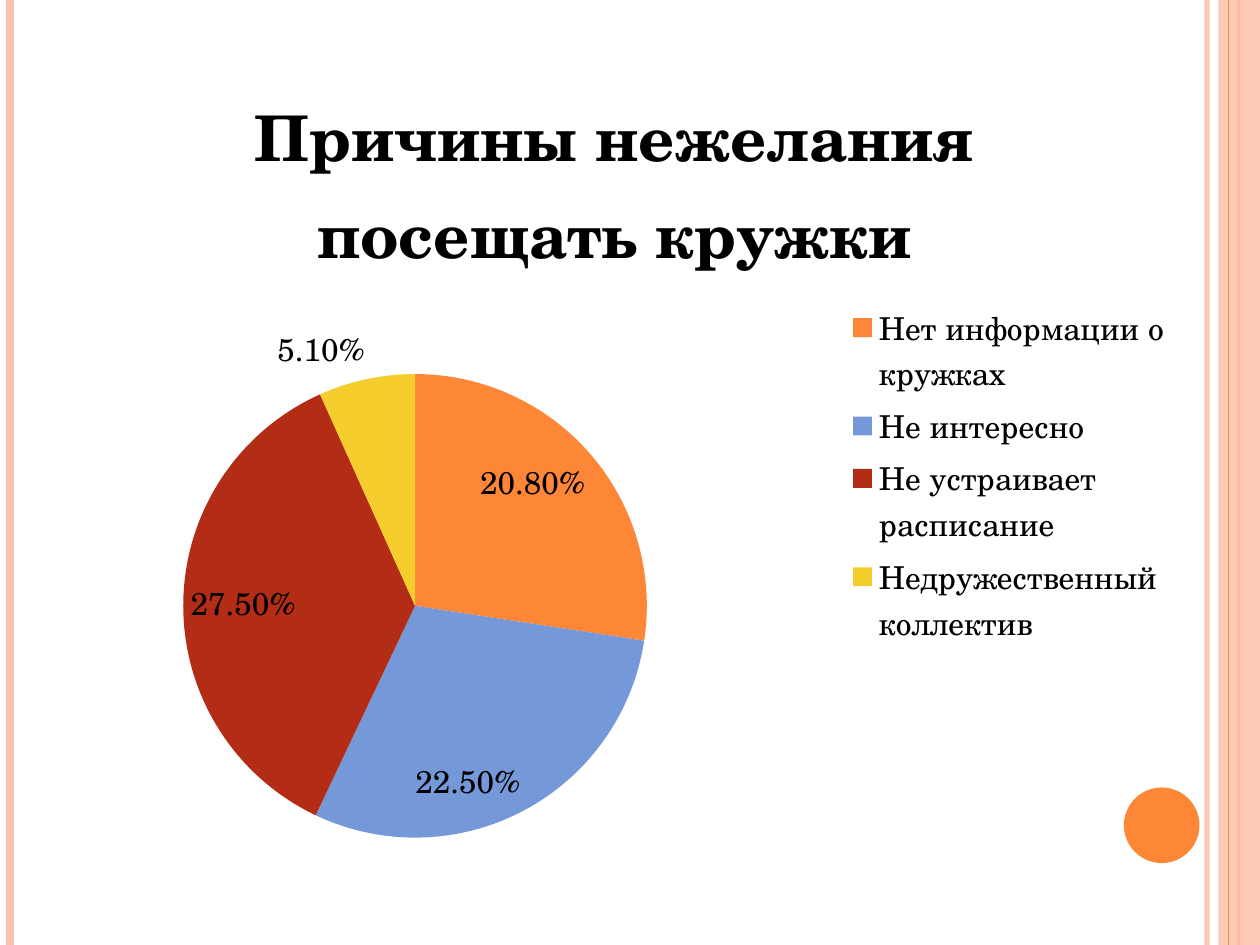
"""Build a slide with a pie chart of reasons for not joining clubs."""
from dataclasses import dataclass

import lxml.etree
import pptx
import pptx.chart.data
import pptx.dml.color
import pptx.enum.chart
import pptx.enum.shapes
import pptx.oxml
import pptx.oxml.ns
import pptx.util
from pptx.util import Inches

RGB = pptx.dml.color.RGBColor
PINK = RGB(0xFE, 0xC3, 0xAE)
ORANGE = RGB(0xFE, 0x86, 0x37)
BLUE = RGB(0x75, 0x98, 0xD9)
RED = RGB(0xB3, 0x2C, 0x16)
YELLOW = RGB(0xF5, 0xCD, 0x2D)
BLACK = RGB(0, 0, 0)
FONT = "TeX Gyre Schola"
TITLE = "Причины нежелания посещать кружки"
WIDTH, HEIGHT = 10, 7.5
qn = pptx.oxml.ns.qn
Place = pptx.enum.chart.XL_LABEL_POSITION
Shape = pptx.enum.shapes.MSO_SHAPE


@dataclass
class Stripe:
    x: float
    color: RGB
    weight: float
    alpha: int = 100


@dataclass
class Slice:
    name: str
    value: float
    color: RGB
    place: Place = Place.INSIDE_END


LINES = [
    Stripe(9.58, PINK, 3, 93),
    Stripe(0.08, PINK, 4.5),
    Stripe(9.83, ORANGE, 1.5),
]
EDGE = Stripe(9.75, ORANGE, 0.75)
PARTS = [
    Slice("Нет информации о кружках", 0.208, ORANGE),
    Slice("Не интересно", 0.225, BLUE),
    Slice("Не устраивает расписание", 0.275, RED),
    Slice("Недружественный коллектив", 0.051, YELLOW, Place.OUTSIDE_END),
]


def fade(shape, alpha: int) -> None:
    color = next(shape._element.spPr.iter(qn("a:srgbClr")))
    lxml.etree.SubElement(color, qn("a:alpha")).set("val", str(alpha * 1000))


def draw_line(slide, item: Stripe) -> None:
    x = Inches(item.x)
    line = slide.shapes.add_connector(
        pptx.enum.shapes.MSO_CONNECTOR.STRAIGHT, x, 0, x, Inches(HEIGHT))
    line.line.color.rgb = item.color
    line.line.width = pptx.util.Pt(item.weight)
    lxml.etree.SubElement(line._element.spPr, qn("a:effectLst"))
    if item.alpha < 100:
        fade(line, item.alpha)


def draw_shape(slide, kind: Shape, box: tuple, color: RGB):
    shape = slide.shapes.add_shape(kind, *map(Inches, box))
    shape.shadow.inherit = False
    shape.fill.solid()
    shape.fill.fore_color.rgb = color
    shape.line.fill.background()
    return shape


def set_font(font, size: int, bold: bool = False) -> None:
    font.name = FONT
    font.size = pptx.util.Pt(size)
    font.bold = bold
    font.color.rgb = BLACK


def set_layout(part, box: tuple, inner: bool = False) -> None:
    for old in part.findall(qn("c:layout")):
        part.remove(old)
    layout = pptx.oxml.parse_xml(f"<c:layout {pptx.oxml.ns.nsdecls('c')}/>")
    manual = lxml.etree.SubElement(layout, qn("c:manualLayout"))
    rules = [("layoutTarget", "inner")] if inner else []
    rules += [("xMode", "edge"), ("yMode", "edge")]
    rules += zip("xywh", map(str, box))
    for tag, val in rules:
        lxml.etree.SubElement(manual, qn(f"c:{tag}")).set("val", val)
    if inner:
        part.insert(0, layout)
    else:
        part.find(qn("c:legendPos")).addnext(layout)


def draw_chart(slide) -> None:
    data = pptx.chart.data.CategoryChartData(number_format="0.00%")
    data.categories = [part.name for part in PARTS]
    data.add_series(TITLE, [part.value for part in PARTS])
    box = map(Inches, (0.35, 0.36, 9.06, 6.69))
    chart = slide.shapes.add_chart(
        pptx.enum.chart.XL_CHART_TYPE.PIE, *box, data).chart
    set_font(chart.font, 18)
    chart.has_title = True
    frame = chart.chart_title.text_frame
    frame.text = TITLE
    set_font(frame.paragraphs[0].runs[0].font, 36, True)
    chart.chart_title.include_in_layout = False
    chart.has_legend = True
    legend = chart.legend
    legend.position = pptx.enum.chart.XL_LEGEND_POSITION.RIGHT
    legend.include_in_layout = False
    set_font(legend.font, 18)
    set_layout(legend._element, (0.7, 0.3, 0.29, 0.42))
    plot = chart.plots[0]
    plot.vary_by_categories = True
    plot.has_data_labels = True
    labels = plot.data_labels
    labels.show_value = True
    labels.show_percentage = False
    labels.number_format = "0.00%"
    labels.number_format_is_linked = False
    labels.position = Place.INSIDE_END
    set_font(labels.font, 18)
    for index, part in enumerate(PARTS):
        point = plot.series[0].points[index]
        point.format.fill.solid()
        point.format.fill.fore_color.rgb = part.color
        label = point.data_label
        label.position = part.place
        set_font(label.font, 18)
    area = chart._chartSpace.chart.plotArea
    set_layout(area, (0.12, 0.39, 0.41, 0.55), True)


def main() -> None:
    deck = pptx.Presentation()
    deck.slide_width, deck.slide_height = Inches(WIDTH), Inches(HEIGHT)
    slide = deck.slides.add_slide(deck.slide_layouts[6])
    for item in LINES:
        draw_line(slide, item)
    band = draw_shape(slide, Shape.RECTANGLE, (9.67, 0, 0.33, HEIGHT), PINK)
    fade(band, 87)
    draw_line(slide, EDGE)
    draw_shape(slide, Shape.OVAL, (8.92, 6.25, 0.6, 0.6), ORANGE)
    draw_chart(slide)
    deck.save("out.pptx")


if __name__ == "__main__":
    main()
